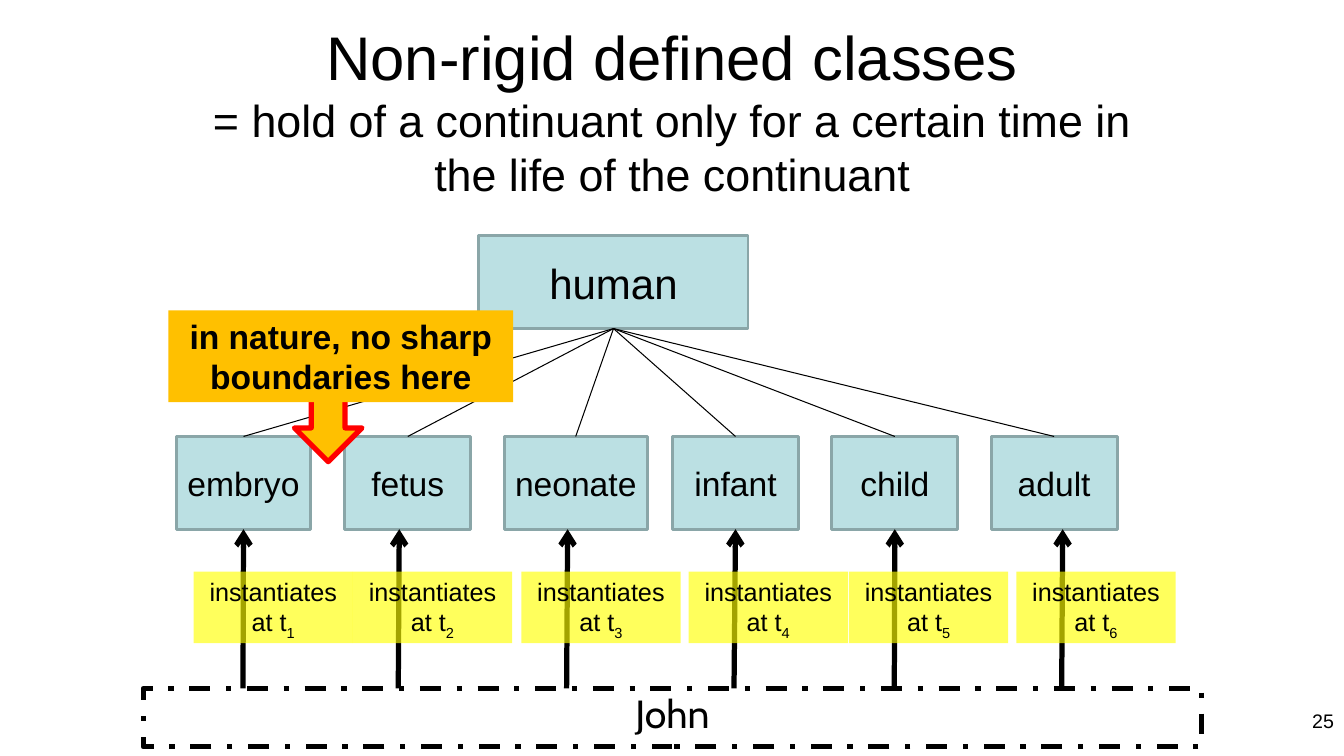
"""Build the slide on non-rigid defined classes and the life stages of John."""
from dataclasses import dataclass

from lxml import etree
from pptx import Presentation
from pptx.dml.color import RGBColor
from pptx.enum.dml import MSO_LINE
from pptx.enum.shapes import MSO_CONNECTOR, MSO_SHAPE
from pptx.enum.text import MSO_ANCHOR, PP_ALIGN
from pptx.oxml.ns import qn
from pptx.util import Inches, Pt

RECT = MSO_SHAPE.RECTANGLE
DOWN = MSO_SHAPE.DOWN_ARROW
LINE = MSO_CONNECTOR.STRAIGHT
DASH = MSO_LINE.DASH_DOT
MIDDLE, TOP = MSO_ANCHOR.MIDDLE, MSO_ANCHOR.TOP
CENTER, RIGHT = PP_ALIGN.CENTER, PP_ALIGN.RIGHT

BLACK, BLUE, EDGE = "000000", "BBE0E3", "8AA6A8"
YELLOW, ORANGE, RED = "FFFF00", "FFC000", "FF0000"
ROW, HIGH = 4.33, 0.92


@dataclass
class Stage:
    name: str
    left: float
    width: float
    tip: float
    tag: float

    @property
    def mid(self) -> float:
        return self.left + self.width / 2


STAGES = [
    Stage("embryo", 1.75, 1.33, 2.42, 1.92),
    Stage("fetus", 3.42, 1.25, 3.96, 3.5),
    Stage("neonate", 5, 1.42, 5.63, 5.17),
    Stage("infant", 6.67, 1.25, 7.29, 6.83),
    Stage("child", 8.25, 1.25, 8.88, 8.42),
    Stage("adult", 9.83, 1.25, 10.54, 10.08),
]


def color(code: str) -> RGBColor:
    return RGBColor.from_string(code)


def add_run(para, text: str, size: float, bold: bool = False,
            font: str = "Arial"):
    run = para.add_run()
    run.text = text
    run.font.name = font
    run.font.size = Pt(size)
    run.font.bold = bold
    run.font.color.rgb = color(BLACK)
    return run


def set_up(shape, anchor, align):
    frame = shape.text_frame
    frame.word_wrap = True
    frame.vertical_anchor = anchor
    para = frame.paragraphs[0]
    para.alignment = align
    return para


def add_box(shapes, at: tuple, fill: str = "", edge: str = "",
            width: float = 2, kind=RECT):
    box = shapes.add_shape(kind, *map(Inches, at))
    box.shadow.inherit = False
    if fill:
        box.fill.solid()
        box.fill.fore_color.rgb = color(fill)
    else:
        box.fill.background()
    if edge:
        box.line.color.rgb = color(edge)
        box.line.width = Pt(width)
    else:
        box.line.fill.background()
    return box


def add_line(shapes, start: tuple, end: tuple, width: float):
    line = shapes.add_connector(LINE, *map(Inches, start + end))
    line.line.color.rgb = color(BLACK)
    line.line.width = Pt(width)
    etree.SubElement(line._element.spPr, qn("a:effectLst"))
    return line


def add_class(shapes, name: str, at: tuple, size: float):
    box = add_box(shapes, at, BLUE, EDGE)
    add_run(set_up(box, MIDDLE, CENTER), name, size)
    return box


def add_link(shapes, stage: Stage, box, count: int) -> None:
    foot = ROW + HIGH
    line = add_line(shapes, (stage.tip - 0.01, 6.83), (stage.tip, foot), 3.75)
    if abs(stage.tip - stage.mid) < 0.02:
        line.end_connect(box, 2)
    etree.SubElement(line.line._get_or_add_ln(), qn("a:tailEnd"), type="arrow")

    tag = add_box(shapes, (stage.tag, 5.67, 1.58, 0.71), YELLOW)
    hue = tag._element.spPr.find(qn("a:solidFill"))[0]
    etree.SubElement(hue, qn("a:alpha"), val="64000")
    para = set_up(tag, TOP, CENTER)
    add_run(para, "instantiates at t", 18)
    sub = add_run(para, str(count), 18)
    sub.font._element.set("baseline", "-25000")


def main() -> None:
    deck = Presentation()
    deck.slide_width, deck.slide_height = Inches(13.33), Inches(7.5)
    shapes = deck.slides.add_slide(deck.slide_layouts[6]).shapes

    human = add_class(shapes, "human", (4.75, 2.34, 2.67, HIGH), 30)

    john = add_box(shapes, (1.42, 6.83, 10.5, 0.58), "", BLACK, 3.75)
    john.line.dash_style = DASH
    add_run(set_up(john, MIDDLE, CENTER), "John", 28, font="Cabin")
    john.text_frame.word_wrap = False
    john.text_frame.margin_bottom = Inches(0.15)

    page = shapes.add_textbox(*map(Inches, (10.22, 6.98, 3.11, 0.52)))
    add_run(set_up(page, TOP, RIGHT), "25", 14)

    boxes = []
    for stage in STAGES:
        at = (stage.left, ROW, stage.width, HIGH)
        box = add_class(shapes, stage.name, at, 24)
        line = add_line(shapes, (6.08, 3.25), (stage.mid, ROW), 0.75)
        line.begin_connect(human, 2)
        line.end_connect(box, 0)
        boxes.append(box)

    for count, (stage, box) in enumerate(zip(STAGES, boxes), 1):
        add_link(shapes, stage, box, count)

    note = shapes.add_group_shape().shapes
    add_box(note, (2.92, 3.83, 0.67, 0.75), ORANGE, RED, 3.75, DOWN)
    sign = add_box(note, (1.67, 3.08, 3.42, 0.91), ORANGE)
    add_run(set_up(sign, TOP, CENTER),
            "in nature, no sharp boundaries here", 24, True)

    title = shapes.add_textbox(*map(Inches, (1.67, 0.25, 10, 1.67)))
    para = set_up(title, MIDDLE, CENTER)
    add_run(para, "Non-rigid defined classes", 44)
    para.add_line_break()
    add_run(para, "= hold of a continuant only for a certain time in "
            "the life of the continuant", 32)

    deck.save("out.pptx")


if __name__ == "__main__":
    main()
